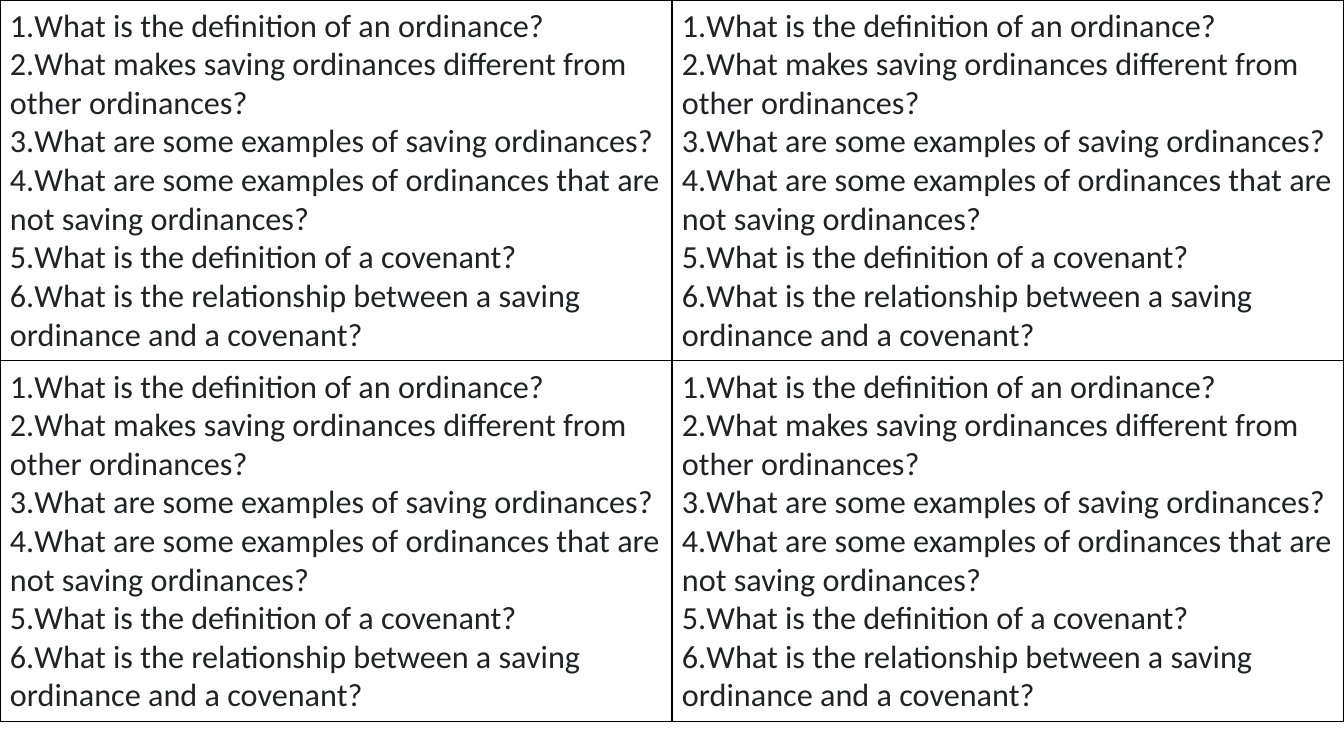
from dataclasses import dataclass
from itertools import product

from lxml.etree import SubElement
from pptx import Presentation
from pptx.dml.color import RGBColor
from pptx.enum.text import MSO_ANCHOR, MSO_AUTO_SIZE, PP_ALIGN
from pptx.oxml.ns import qn
from pptx.util import Inches, Pt

QUESTIONS = [
    "What is the definition of an ordinance?",
    "What makes saving ordinances different from other ordinances?",
    "What are some examples of saving ordinances?",
    "What are some examples of ordinances that are not saving ordinances?",
    "What is the definition of a covenant?",
    "What is the relationship between a saving ordinance and a covenant?",
]


@dataclass(frozen=True)
class Theme:
    font: str = "Calibri"
    text_size: Pt = Pt(23)
    text_color: RGBColor = RGBColor(0x21, 0x22, 0x25)
    border_color: RGBColor = RGBColor(0, 0, 0)
    border_width: Pt = Pt(0.75)


class HandoutSlide:
    def __init__(self, presentation, theme):
        self.theme = theme
        self.slide = presentation.slides.add_slide(presentation.slide_layouts[6])
        self.column_width = presentation.slide_width // 2
        self.row_height = Inches(3.58)

    def add_question_card(self, column, row, questions):
        card = self.slide.shapes.add_textbox(
            column * self.column_width,
            row * self.row_height,
            self.column_width,
            self.row_height,
        )
        card.line.color.rgb = self.theme.border_color
        card.line.width = self.theme.border_width
        text_frame = card.text_frame
        text_frame.word_wrap = True
        text_frame.auto_size = MSO_AUTO_SIZE.SHAPE_TO_FIT_TEXT
        text_frame.vertical_anchor = MSO_ANCHOR.TOP
        text_frame.text = "\n".join(questions)
        for paragraph in text_frame.paragraphs:
            self.number_paragraph(paragraph)

    def number_paragraph(self, paragraph):
        paragraph.alignment = PP_ALIGN.LEFT
        properties = paragraph._p.get_or_add_pPr()
        properties.set("marL", "0")
        properties.set("indent", "0")
        SubElement(properties, qn("a:buFont"), typeface="+mj-lt")
        SubElement(properties, qn("a:buAutoNum"), type="arabicPeriod")
        for run in paragraph.runs:
            run.font.name = self.theme.font
            run.font.size = self.theme.text_size
            run.font.color.rgb = self.theme.text_color


def main():
    presentation = Presentation()
    presentation.slide_width = Inches(13.33)
    presentation.slide_height = Inches(7.5)
    handout = HandoutSlide(presentation, Theme())
    for row, column in product(range(2), repeat=2):
        handout.add_question_card(column, row, QUESTIONS)
    presentation.save("out.pptx")


if __name__ == "__main__":
    main()
